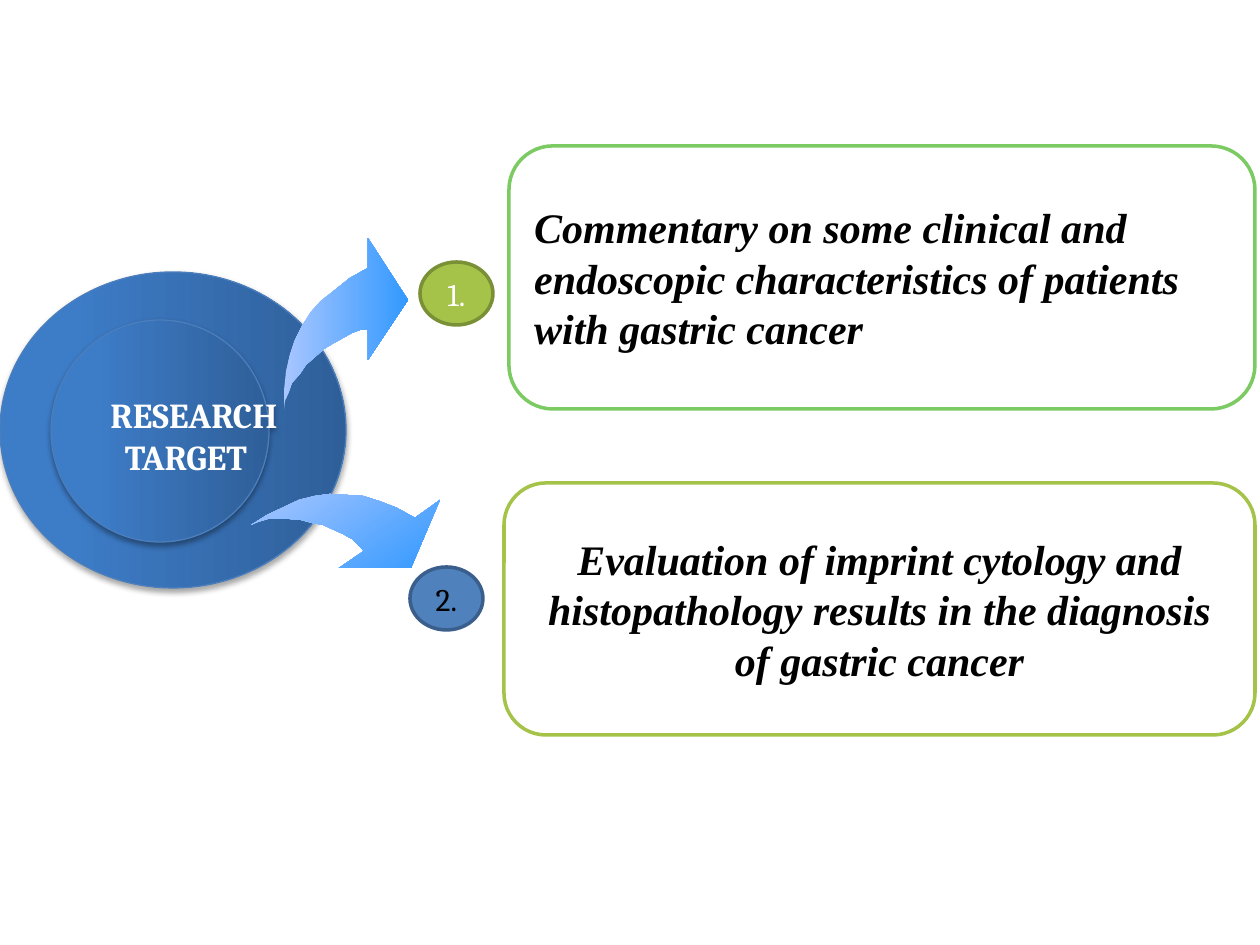
from lxml import etree
from pptx import Presentation
from pptx.dml.color import RGBColor
from pptx.enum.shapes import MSO_SHAPE as SHAPE
from pptx.enum.text import MSO_ANCHOR as ANCHOR, PP_ALIGN as ALIGN
from pptx.oxml import parse_xml
from pptx.oxml.ns import nsdecls, qn
from pptx.util import Inches, Pt

PX = Inches(1) / 126

WHITE = RGBColor(0xFF, 0xFF, 0xFF)
BLACK = RGBColor(0x00, 0x00, 0x00)
GREEN = RGBColor(0x7C, 0xCA, 0x62)
LIME = RGBColor(0xA5, 0xC2, 0x49)
DARK_LIME = RGBColor(0x7A, 0x90, 0x36)
BLUE = RGBColor(0x4F, 0x81, 0xBD)
DARK_BLUE = RGBColor(0x3A, 0x5F, 0x8C)
CIRCLE_LINE = RGBColor(0x4B, 0x7E, 0xBC)
CIRCLE_LIGHT = RGBColor(0x3D, 0x7C, 0xC7)
CIRCLE_DARK = RGBColor(0x2F, 0x5F, 0x99)
ARROW_LIGHT = RGBColor(0xA8, 0xC6, 0xFF)
ARROW_DARK = RGBColor(0x33, 0x99, 0xFF)

SOFT_SHADOW = (
    f'<a:effectLst {nsdecls("a")}><a:outerShdw blurRad="40000" dist="23000" dir="5400000" '
    'rotWithShape="0"><a:srgbClr val="000000"><a:alpha val="35000"/></a:srgbClr>'
    "</a:outerShdw></a:effectLst>"
)

prs = Presentation()
prs.slide_width, prs.slide_height = Inches(10), Inches(7.5)
slide = prs.slides.add_slide(prs.slide_layouts[6])


def add_outlined(kind, box, line_color, line_width):
    """Add a preset shape at a px box, without the theme shadow."""
    shape = slide.shapes.add_shape(kind, *(round(v * PX) for v in box))
    shape.shadow.inherit = False
    shape.line.color.rgb = line_color
    shape.line.width = Pt(line_width)
    shape.text_frame.vertical_anchor = ANCHOR.MIDDLE
    return shape


def fill_gradient(shape, start, end, start_position, angle):
    shape.fill.gradient()
    shape.fill.gradient_angle = angle
    first, last = shape.fill.gradient_stops
    first.color.rgb, first.position = start, start_position
    last.color.rgb, last.position = end, 1


# Numbers beside the targets
for number, left, top, fill, line, color in [
    ("1.", 420, 262, LIME, DARK_LIME, WHITE),
    ("2.", 410, 567, BLUE, DARK_BLUE, BLACK),
]:
    badge = add_outlined(SHAPE.FLOWCHART_CONNECTOR, (left, top, 73, 63), line, 2)
    badge.fill.solid()
    badge.fill.fore_color.rgb = fill
    label = badge.text_frame.paragraphs[0]
    label.text = number
    label.alignment = ALIGN.CENTER
    label.font.name, label.font.size = "Cambria", Pt(18)
    label.font.color.rgb = color

# Research targets
for wording, box, line, alignment in [
    ("Commentary on some clinical and endoscopic characteristics of patients "
     "with gastric cancer", (509, 146, 746, 263), GREEN, ALIGN.LEFT),
    ("Evaluation of imprint cytology and histopathology results in the diagnosis "
     "of gastric cancer", (504, 483, 751, 252), LIME, ALIGN.CENTER),
]:
    target = add_outlined(SHAPE.FLOWCHART_ALTERNATE_PROCESS, box, line, 2)
    target.fill.solid()
    target.fill.fore_color.rgb = WHITE
    target.text_frame.word_wrap = True
    statement = target.text_frame.paragraphs[0]
    statement.text = wording
    statement.alignment = alignment
    statement.font.name, statement.font.size = "Times New Roman", Pt(24)
    statement.font.bold = statement.font.italic = True
    statement.font.color.rgb = BLACK

# Nested circles; the inner one, drawn last, carries the heading
for box in [(0, 272, 346, 316), (51, 320, 218, 222)]:
    circle = add_outlined(SHAPE.OVAL, box, CIRCLE_LINE, 0.75)
    fill_gradient(circle, CIRCLE_LIGHT, CIRCLE_DARK, 0.2, 0)
    properties = circle.element.spPr
    properties.replace(properties.find(qn("a:effectLst")), parse_xml(SOFT_SHADOW))

heading = circle.text_frame
heading.word_wrap = False
heading.margin_left, heading.margin_right = round(52 * PX), 0
heading.margin_top, heading.margin_bottom = round(8 * PX), 0
heading.text = "RESEARCH\nTARGET"
for line in heading.paragraphs:
    line.alignment = ALIGN.CENTER
    line.font.name, line.font.size = "Cambria", Pt(20)
    line.font.bold = True
    line.font.color.rgb = WHITE
heading.paragraphs[0]._p.get_or_add_pPr().set("marL", str(round(16 * PX)))

# Curved arrows from the circles to the numbers
upper_arrow = [
    (284, 410), (284, 391), (286, 372), (290, 355), (295, 340), (302, 326), (311, 312),
    (321, 301), (335, 290), (350, 278), (368, 268), (368, 238), (408, 300), (368, 360),
    (368, 330), (360, 330), (352, 333), (343, 338), (334, 343), (324, 349), (315, 357),
    (306, 365), (300, 374), (292, 383), (289, 392), (285, 401),
]
lower_arrow = [
    (251, 525), (267, 515), (284, 507), (299, 500), (315, 496), (330, 494), (347, 495),
    (363, 496), (379, 501), (397, 508), (415, 518), (440, 500), (411, 568), (339, 568),
    (364, 551), (359, 546), (352, 539), (343, 534), (334, 530), (323, 525), (312, 523),
    (301, 520), (289, 519), (278, 519), (268, 519), (258, 522),
]
for points, angle in [(upper_arrow, 0), (lower_arrow, 304)]:
    outline = slide.shapes.build_freeform(*points[0], scale=PX)
    outline.add_line_segments(points[1:], close=True)
    arrow = outline.convert_to_shape()
    arrow.shadow.inherit = False
    arrow.line.fill.background()
    fill_gradient(arrow, ARROW_LIGHT, ARROW_DARK, 0, angle)

prs.save("out.pptx")
